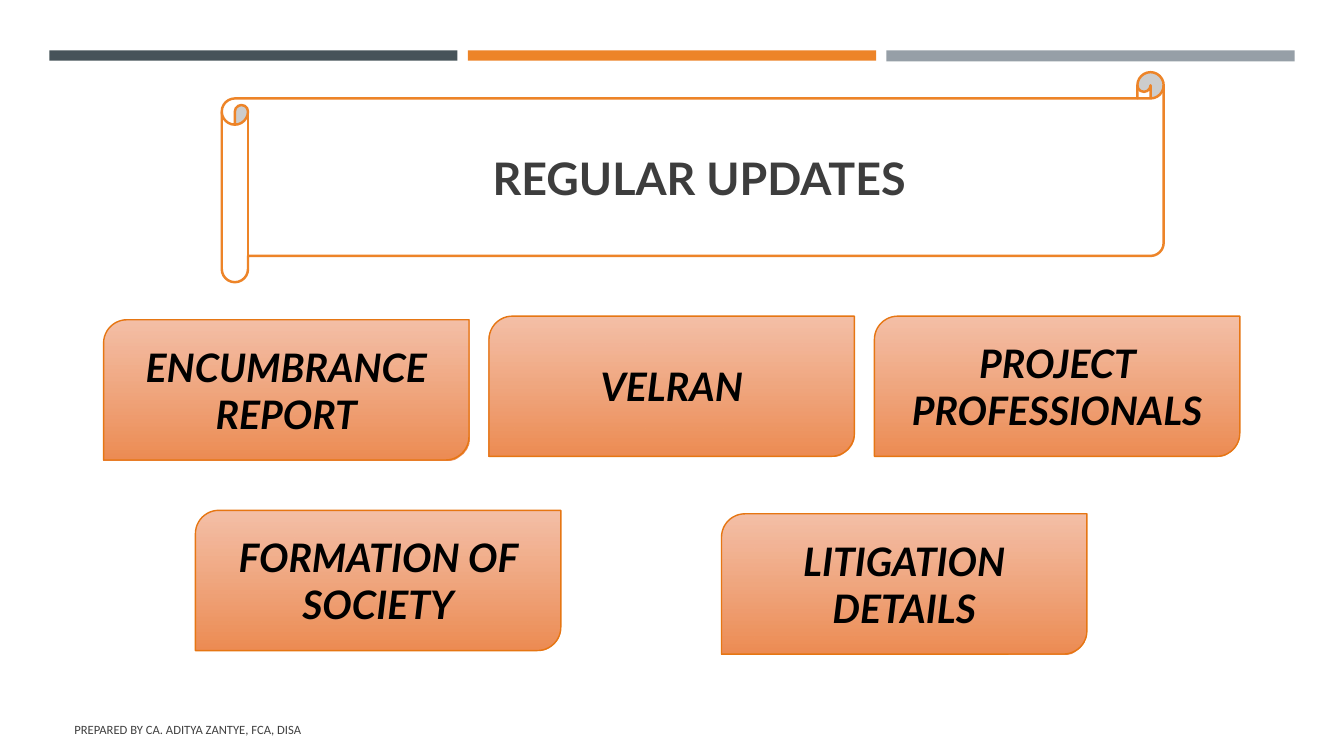
from pptx import Presentation
from pptx.dml.color import RGBColor
from pptx.enum.shapes import MSO_SHAPE as SHAPE
from pptx.enum.text import MSO_ANCHOR as ANCHOR, PP_ALIGN as ALIGN
from pptx.oxml.ns import qn
from pptx.util import Pt
from lxml import etree


def color(hex_code):
    return RGBColor.from_string(hex_code)


def write(holder, text, size, font, hex_code, align, bold=False, italic=False):
    """Put one vertically centred paragraph into a shape or text box."""
    frame = holder.text_frame
    frame.word_wrap = True
    frame.vertical_anchor = ANCHOR.MIDDLE
    paragraph = frame.paragraphs[0]
    paragraph.text = text
    paragraph.alignment = align
    style = paragraph.runs[0].font
    style.size, style.name = Pt(size), font
    style.bold, style.italic = bold, italic
    style.color.rgb = color(hex_code)


prs = Presentation()
prs.slide_width, prs.slide_height = Pt(960), Pt(540)
slide = prs.slides.add_slide(prs.slide_layouts[6])
shapes = slide.shapes

# Top bars
for column, (bar_color, height) in enumerate(
        [("465359", 7.4), ("ED8428", 7.4), ("969FA7", 7.8)]):
    bar = shapes.add_shape(SHAPE.RECTANGLE, Pt(35.2 + column * 299), Pt(36),
                           Pt(291.6), Pt(height))
    bar.shadow.inherit = False
    bar.fill.solid()
    bar.fill.fore_color.rgb = color(bar_color)
    bar.line.fill.background()

# Footer
footer = shapes.add_textbox(Pt(46), Pt(506.4), Pt(544.4), Pt(28.8))
write(footer, "PREPARED BY CA. ADITYA ZANTYE, FCA, DISA", 9, "Calibri",
      "404040", ALIGN.LEFT)

# Title scroll
scroll = shapes.add_shape(SHAPE.HORIZONTAL_SCROLL, Pt(158.4), Pt(51.6),
                          Pt(672.8), Pt(150))
scroll.shadow.inherit = False
scroll.fill.solid()
scroll.fill.fore_color.rgb = color("FFFFFF")
scroll.line.color.rgb = color("ED8428")
scroll.line.width = Pt(1.75)
write(scroll, "REGULAR UPDATES", 32, "Lato", "3D3D3D", ALIGN.CENTER, bold=True)

# Update topics
topics = [
    ("ENCUMBRANCE REPORT", 74, 228.4),
    ("VELRAN", 349.3, 225.8),
    ("PROJECT PROFESSIONALS", 624.6, 225.8),
    ("FORMATION OF SOCIETY", 139.6, 364.5),
    ("LITIGATION DETAILS", 515.4, 367),
]
for topic, left, top in topics:
    card = shapes.add_shape(SHAPE.ROUND_2_DIAG_RECTANGLE, Pt(left), Pt(top),
                            Pt(261), Pt(100.2))
    card.shadow.inherit = False
    card.fill.gradient()
    card.fill.gradient_angle = 270
    for stop, position, stop_color in zip(card.fill.gradient_stops, (0, 1),
                                          ("F3B89D", "ED8C53")):
        stop.position = position
        stop.color.rgb = color(stop_color)
    # The upper stop is 90 % opaque
    upper_color = next(card._element.spPr.iter(qn("a:srgbClr")))
    etree.SubElement(upper_color, qn("a:alpha"), val="90000")
    card.line.color.rgb = color("E67613")
    card.line.width = Pt(1)
    write(card, topic, 28, "Lato", "000000", ALIGN.CENTER, bold=True, italic=True)

prs.save("out.pptx")
